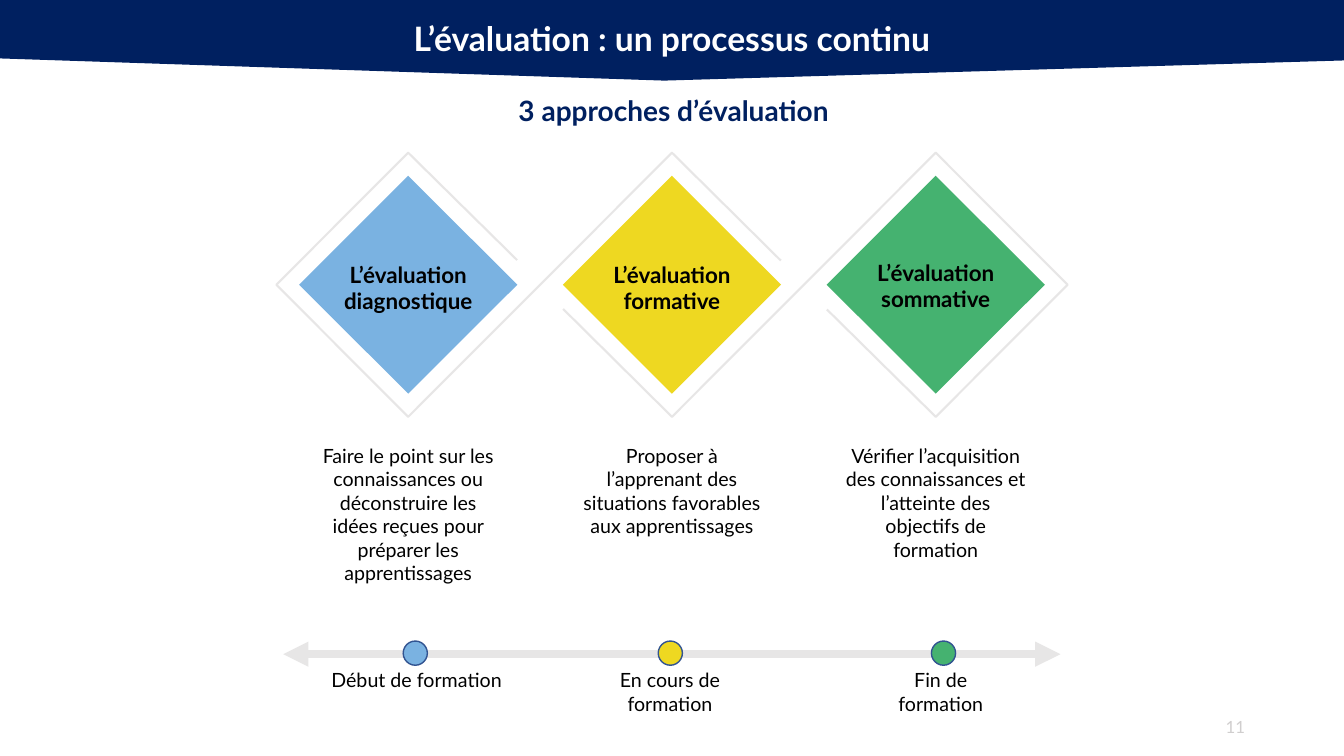
import pptx
import pptx.util
import pptx.dml.color
import pptx.enum.shapes
import pptx.enum.text
from dataclasses import dataclass
from lxml import etree

SHAPE = pptx.enum.shapes.MSO_SHAPE
ANCHOR = pptx.enum.text.MSO_ANCHOR
ALIGN = pptx.enum.text.PP_ALIGN


@dataclass(frozen=True)
class Theme:
    font: str = "Lato"
    navy: str = "002060"
    white: str = "FFFFFF"
    black: str = "000000"
    grey: str = "E7E6E6"
    number: str = "D0CECE"
    rim: str = "325491"
    blue: str = "7AB2E1"
    yellow: str = "EED821"
    green: str = "45B270"
    title: int = 24
    subtitle: int = 20
    heading: int = 16
    body: int = 14
    small: int = 12


class Deck:
    COLS, ROWS = 40, 30

    def __init__(self, theme):
        self.theme = theme
        self.prs = pptx.Presentation()
        self.prs.slide_width = pptx.util.Inches(13.33)
        self.prs.slide_height = pptx.util.Inches(7.5)
        self.s = self.prs.slides.add_slide(self.prs.slide_layouts[6])

    def x(self, cols):
        return round(self.prs.slide_width * cols / self.COLS)

    def y(self, rows):
        return round(self.prs.slide_height * rows / self.ROWS)

    def box(self, cx, cy, w, h):
        return self.x(cx - w / 2), self.y(cy - h / 2), self.x(w), self.y(h)

    def rgb(self, color):
        return pptx.dml.color.RGBColor.from_string(color)

    def apply(self, target, values):
        for name, value in values.items():
            setattr(target, name, value)

    def stroke(self, line, color, width):
        line.color.rgb = self.rgb(color)
        line.width = pptx.util.Pt(width)

    def paint(self, sp, fill=None, line=None, width=1):
        sp.shadow.inherit = False
        if fill:
            sp.fill.solid()
            sp.fill.fore_color.rgb = self.rgb(fill)
        else:
            sp.fill.background()
        if line:
            self.stroke(sp.line, line, width)
        else:
            sp.line.fill.background()

    def shape(self, kind, cx, cy, w, h, rotation=0, **style):
        sp = self.s.shapes.add_shape(kind, *self.box(cx, cy, w, h))
        sp.rotation = rotation
        self.paint(sp, **style)

    def outline(self, points, close=False, **style):
        pts = [(self.x(cx), self.y(cy)) for cx, cy in points]
        fb = self.s.shapes.build_freeform(*pts[0])
        fb.add_line_segments(pts[1:], close=close)
        self.paint(fb.convert_to_shape(), **style)

    def text(self, text, cx, cy, w, h, size, color, bold=False, inset=None,
             anchor=ANCHOR.MIDDLE, align=ALIGN.CENTER, spacing=1.0):
        tf = self.s.shapes.add_textbox(*self.box(cx, cy, w, h)).text_frame
        self.apply(tf, {"word_wrap": True, "vertical_anchor": anchor})
        if inset is not None:
            sides = ("left", "top", "right", "bottom")
            self.apply(tf, {f"margin_{side}": pptx.util.Inches(inset) for side in sides})
        p = tf.paragraphs[0]
        self.apply(p, {"text": text, "alignment": align, "line_spacing": spacing})
        for r in p.runs:
            self.apply(r.font, {"name": self.theme.font, "bold": bold,
                                "size": pptx.util.Pt(size)})
            r.font.color.rgb = self.rgb(color)

    def double_arrow(self, x1, x2, cy, color, width):
        kind = pptx.enum.shapes.MSO_CONNECTOR.STRAIGHT
        cn = self.s.shapes.add_connector(kind, self.x(x1), self.y(cy), self.x(x2), self.y(cy))
        self.stroke(cn.line, color, width)
        ns = pptx.oxml.ns.qn
        for end in ("a:headEnd", "a:tailEnd"):
            etree.SubElement(cn.line._get_or_add_ln(), ns(end), type="triangle")
        etree.SubElement(cn._element.spPr, ns("a:effectLst"))


def main():
    t = Theme()
    d = Deck(t)
    mid_x, mid_y, pitch = 20, 11.3, 7.85

    d.outline([(0, 0), (40, 0), (40, 2.4), (19.77, 3.2), (0, 2.32)], close=True, fill=t.navy)
    d.text("L’évaluation : un processus continu", 20, 1.6, 40, 3.2,
           t.title, t.white, bold=True, spacing=0.9)
    d.text("3 approches d’évaluation", 20.05, 4.48, 40, 3.2,
           t.subtitle, t.navy, bold=True, spacing=0.9)
    d.text("11", 32.85, 28.84, 9, 1.12, t.small, t.number, align=ALIGN.RIGHT)

    ribbon = [(-4.61, -0.98), (-pitch, -5.24), (-1.5 * pitch, 0),
              (-pitch, 5.24), (0, -5.24), (3.24, -0.96)]
    for sign in (1, -1):
        d.outline([(mid_x + sign * dx, mid_y + sign * dy) for dx, dy in ribbon],
                  line=t.grey, width=1.5)

    d.double_arrow(8.43, 31.56, 25.96, t.grey, 6)

    approaches = [
        (t.blue, "L’évaluation diagnostique", 11.46,
         "Faire le point sur les connaissances ou déconstruire les idées reçues "
         "pour préparer les apprentissages", "Début de formation", 12.36, 12.4),
        (t.yellow, "L’évaluation formative", 11.46,
         "Proposer à l’apprenant des situations favorables aux apprentissages",
         "En cours de formation", 19.95, 19.94),
        (t.green, "L’évaluation sommative", 11.38,
         "Vérifier l’acquisition des connaissances et l’atteinte des objectifs de formation",
         "Fin de\vformation", 28.08, 28),
    ]
    body = {"size": t.body, "color": t.black, "inset": 0.12, "anchor": ANCHOR.TOP}
    for i, (color, heading, heading_y, aim, stage, dot_x, stage_x) in enumerate(approaches):
        cx = mid_x + (i - 1) * pitch
        d.shape(SHAPE.RECTANGLE, cx, mid_y, 4.59, 6.12, rotation=315, fill=color)
        d.text(heading, cx, heading_y, 4.38, 3.16, t.heading, t.black,
               bold=True, inset=0, spacing=0.95)
        d.text(aim, cx, 20.84, 6.27, 7.44, **body)
        d.text(stage, stage_x, 27.3, 6.27, 2.52, **body)
        d.shape(SHAPE.FLOWCHART_CONNECTOR, dot_x, 25.92, 0.72, 0.96, fill=color, line=t.rim)

    d.prs.save("out.pptx")


if __name__ == "__main__":
    main()
